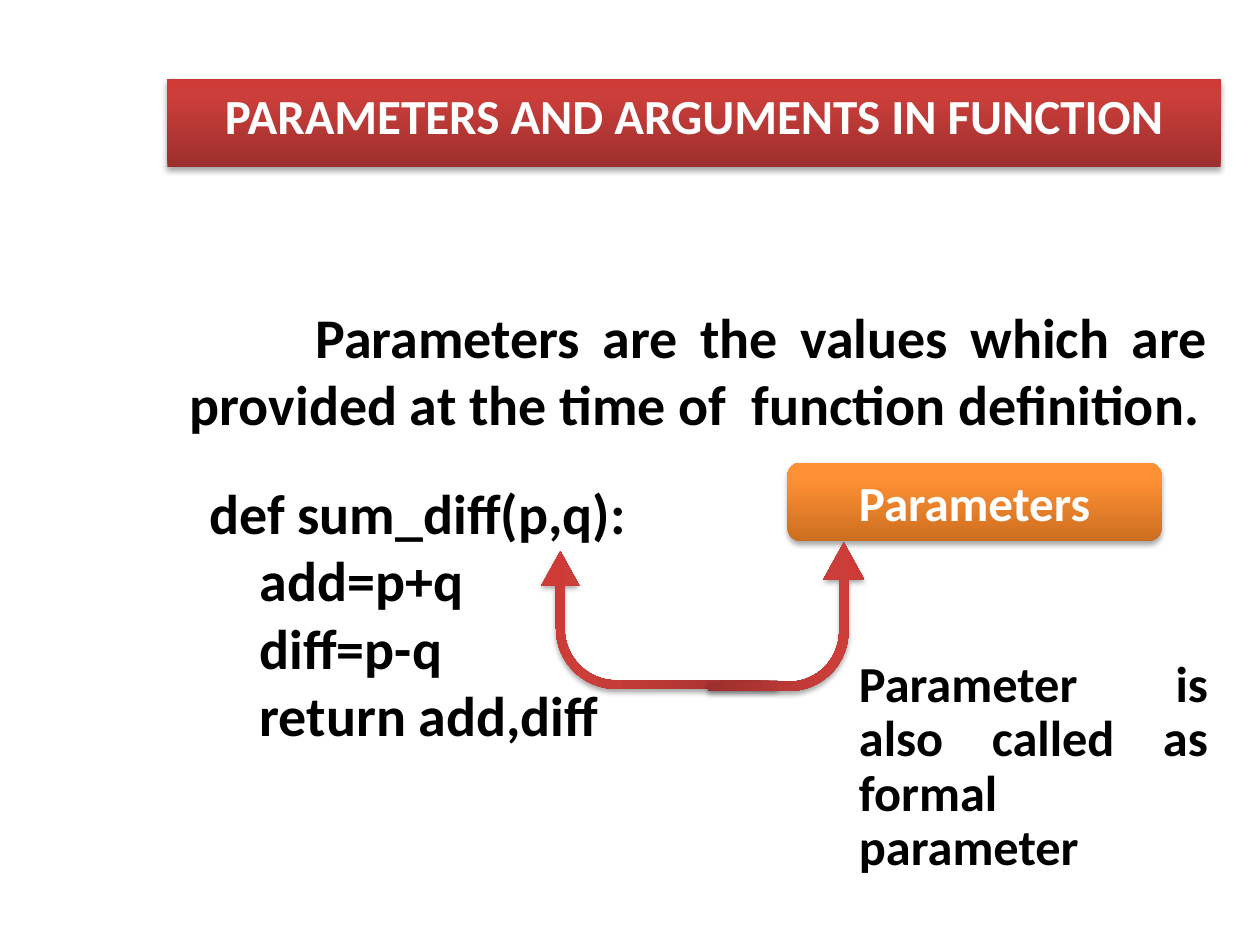
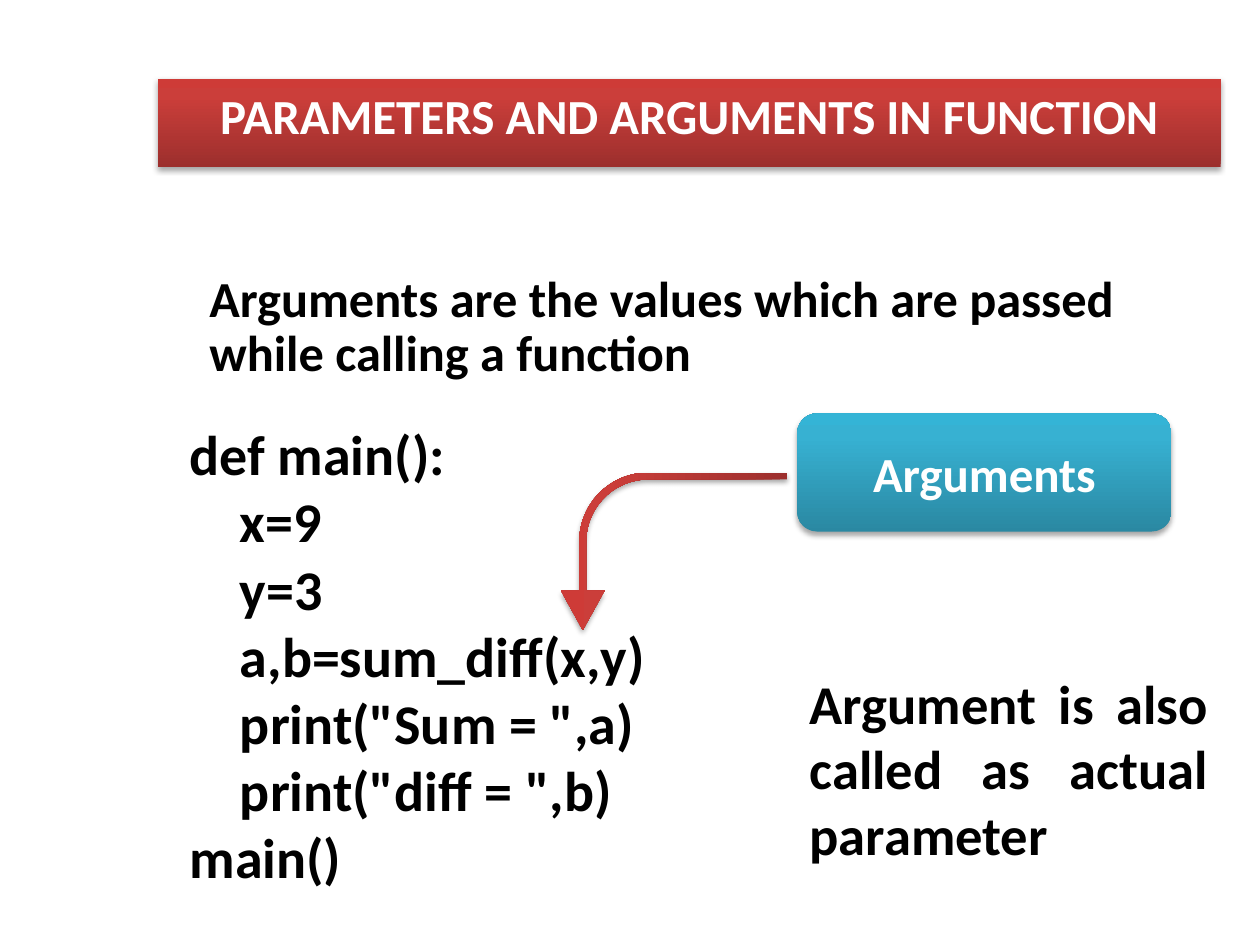
from lxml.etree import SubElement
from pptx import Presentation
from pptx.dml.color import RGBColor
from pptx.enum.shapes import MSO_SHAPE
from pptx.enum.text import MSO_ANCHOR, MSO_AUTO_SIZE, PP_ALIGN
from pptx.oxml.ns import qn
from pptx.util import Inches, Pt

COLORS = {"text": "000000", "light": "FFFFFF", "shadow": "000000"}
# Gradient colours from bottom to top, at the positions in STOPS
GLOSS = {
    "red": ("9C2F2D", "CB3E3A", "CE3B37"),
    "orange": ("CC6E20", "FF9034", "FF9136"),
    "teal": ("2A88A2", "37B1D2", "34B4D6"),
}
STOPS = (0, 80000, 100000)
FONT = "Calibri"
TITLE = "PARAMETERS AND ARGUMENTS IN FUNCTION"

prs = Presentation()
prs.slide_width, prs.slide_height = Inches(10), Inches(7.5)
U = prs.slide_width // 128  # grid of 128 columns by 96 rows
RIGHT = 124  # column where titles and notes end


def write(s, text, size=32, color="text", align=PP_ALIGN.LEFT,
          anchor=MSO_ANCHOR.MIDDLE, spacing=1.0, before=0, first=0, below=0.05):
    """Write one paragraph a line; a leading tab indents the whole line.

    first is the first-line indent and below the bottom inset, in inches.
    """
    tf = s.text_frame
    tf.word_wrap, tf.auto_size = True, MSO_AUTO_SIZE.NONE
    tf.vertical_anchor, tf.margin_bottom = anchor, Inches(below)
    for i, line in enumerate(text.split("\n")):
        p = tf.paragraphs[0] if i == 0 else tf.add_paragraph()
        p.alignment, p.line_spacing, p.space_before = align, spacing, Pt(before)
        pPr = p._p.get_or_add_pPr()
        pPr.set("marL", str(Inches(0.4) if line.startswith("\t") else 0))
        pPr.set("indent", str(Inches(first)))
        r = p.add_run()
        r.text = line.strip("\t")
        r.font.name, r.font.size, r.font.bold = FONT, Pt(size), True
        r.font.color.rgb = RGBColor.from_string(COLORS[color])


def gloss(s, name):
    """Give a shape a vertical gradient, no line and a soft shadow."""
    s.fill.gradient()
    s.fill.gradient_angle = 90
    spPr = s.element.spPr
    stops = spPr.find(qn("a:gradFill")).find(qn("a:gsLst"))
    for stop in list(stops):
        stops.remove(stop)
    for pos, color in zip(STOPS, GLOSS[name]):
        stop = SubElement(stops, qn("a:gs"), pos=str(pos))
        SubElement(stop, qn("a:srgbClr"), val=color)
    s.line.fill.background()
    s.shadow.inherit = False
    shadow = SubElement(spPr.find(qn("a:effectLst")), qn("a:outerShdw"),
                        blurRad=str(Pt(3.1)), dist=str(Pt(1.8)),
                        dir="5400000", rotWithShape="0")
    color = SubElement(shadow, qn("a:srgbClr"), val=COLORS["shadow"])
    SubElement(color, qn("a:alpha"), val="35000")


# Boxes are left, top, width, height in grid cells
SLIDES = [
    {
        "title_left": 17,
        "texts": [
            ((18, 19, 106, 51),
             "Parameters are the values which are provided at the time of"
             "  function definition.",
             dict(align=PP_ALIGN.JUSTIFY, first=1, below=1.13)),
            ((86, 65, 38, 26), "Parameter is also called as formal parameter",
             dict(size=28.8, align=PP_ALIGN.JUSTIFY, spacing=0.9)),
            ((20, 48, 64, 36),
             "def sum_diff(p,q):\n\tadd=p+q\n\tdiff=p-q\n\treturn add,diff",
             dict(anchor=MSO_ANCHOR.TOP)),
        ],
        "label": ((80, 47, 38, 8), "Parameters", "orange"),
        "arrows": [
            ((60, 51, 14, 24), ("flipH", "flipV"), (0.063, 0.138, 0.25, 0.438)),
            ((72.3, 54.7, 15.1, 15.9), ("flipH",), (0.063, 0.138, 0.25, 0.401)),
        ],
    },
    {
        "title_left": 16,
        "texts": [
            ((20, 26, 103, 26),
             "Arguments are the values which are passed while calling a function",
             dict(size=28.8, spacing=0.9, below=0.93)),
            ((18, 42, 57, 49.5),
             "def main():\n\tx=9\n\ty=3\n\ta,b=sum_diff(x,y)\n"
             '\tprint("Sum = ",a)\n\tprint("diff = ",b)\nmain()',
             dict(anchor=MSO_ANCHOR.TOP)),
            ((81, 65, 43, 26), "Argument is also called as actual parameter",
             dict(size=31.2, align=PP_ALIGN.JUSTIFY)),
        ],
        "label": ((81, 42, 38, 12), "Arguments", "teal"),
        "arrows": [
            ((60.5, 44.5, 16, 23), ("flipV",), (0.044, 0.138, 0.25, 0.438)),
        ],
    },
]

for content in SLIDES:
    slide = prs.slides.add_slide(prs.slide_layouts[5])

    title = slide.shapes.title
    left = content["title_left"]
    title.left, title.top = left * U, 8 * U
    title.width, title.height = (RIGHT - left) * U, 9 * U
    gloss(title, "red")
    write(title, TITLE, size=28, color="light", align=PP_ALIGN.CENTER,
          anchor=MSO_ANCHOR.TOP, before=5.6)

    for box, text, style in content["texts"]:
        s = slide.shapes.add_textbox(*(int(n * U) for n in box))
        write(s, text, **style)

    box, text, color = content["label"]
    s = slide.shapes.add_shape(MSO_SHAPE.ROUNDED_RECTANGLE, *(n * U for n in box))
    gloss(s, color)
    write(s, text, size=28, color="light", align=PP_ALIGN.CENTER)

    for box, flips, adjustments in content["arrows"]:
        s = slide.shapes.add_shape(MSO_SHAPE.BENT_ARROW, *(int(n * U) for n in box))
        s.rotation = 90
        for flip in flips:
            s.element.spPr.xfrm.set(flip, "1")
        for i, value in enumerate(adjustments):
            s.adjustments[i] = value
        gloss(s, "red")

prs.save("out.pptx")
